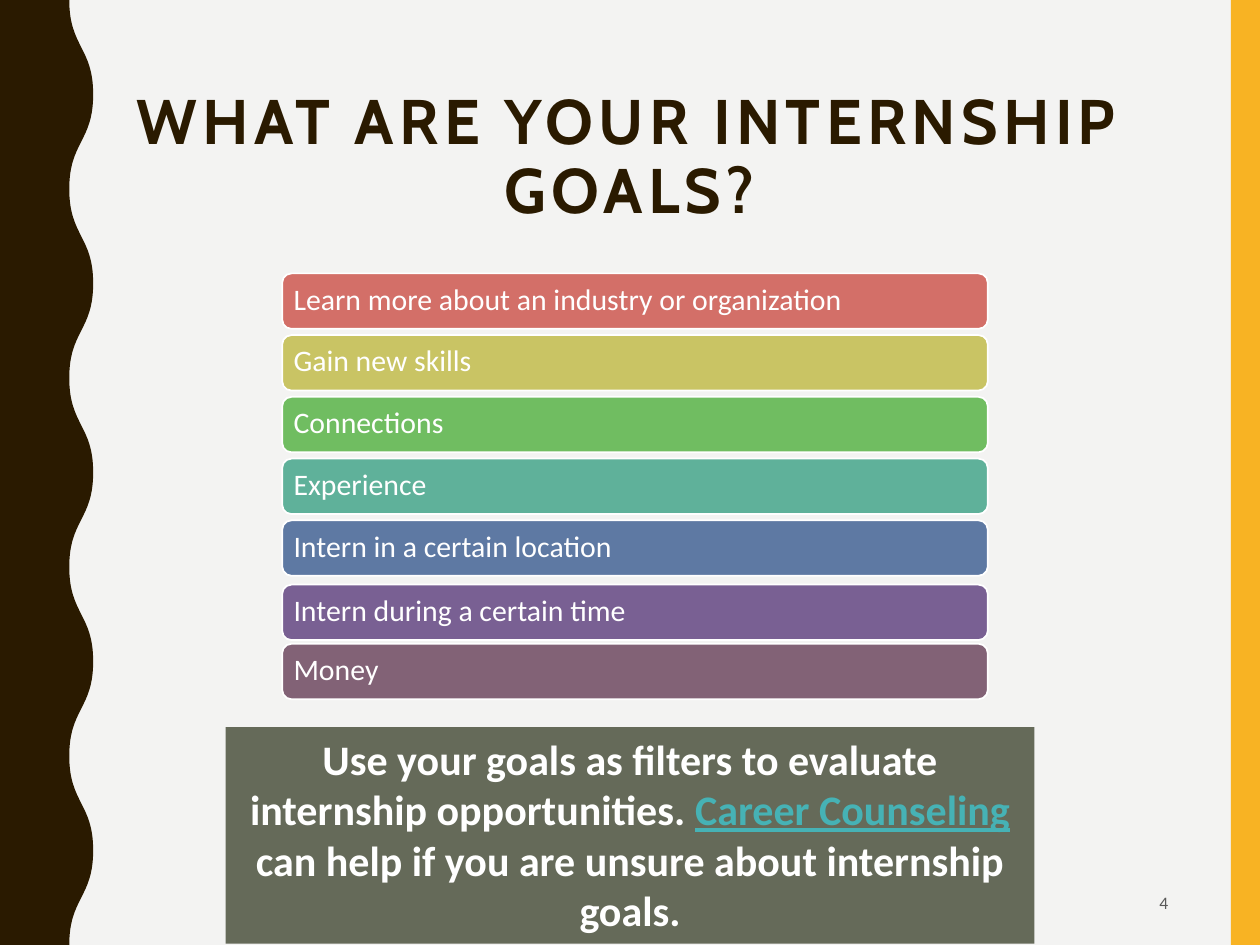
import lxml.etree
import pptx
import pptx.util
import pptx.dml.color
import pptx.enum.shapes
import pptx.enum.text
import pptx.oxml.ns

Inches = pptx.util.Inches
Pt = pptx.util.Pt
Shape = pptx.enum.shapes.MSO_SHAPE
Align = pptx.enum.text.PP_ALIGN
Anchor = pptx.enum.text.MSO_ANCHOR
qn = pptx.oxml.ns.qn


def paint(fmt, color):
    fmt.solid()
    fmt.fore_color.rgb = pptx.dml.color.RGBColor.from_string(color)


def write(shape, text, size, color="FFFFFF", font="Calibri", bold=False, line=False,
          align=Align.LEFT, anchor=Anchor.TOP, space=None, track=0):
    """Add a run to the shape's first paragraph."""
    frame = shape.text_frame
    frame.word_wrap = True
    frame.vertical_anchor = anchor
    para = frame.paragraphs[0]
    para.alignment = align
    para.line_spacing = space
    run = para.add_run()
    run.text = text
    run.font.name = font
    run.font.size = Pt(size)
    run.font.bold = bold
    run.font.underline = line
    paint(run.font.fill, color)
    if track:
        run.font._element.set("spc", str(track * 100))


deck = pptx.Presentation()
deck.slide_width = Inches(10)
deck.slide_height = Inches(7.5)
slide = deck.slides.add_slide(deck.slide_layouts[6])
paint(slide.background.fill, "F3F3F2")
shapes = slide.shapes

# Right stripe
stripe = shapes.add_shape(Shape.RECTANGLE, Inches(9.77), 0, Inches(0.23), Inches(7.5))
stripe.shadow.inherit = False
paint(stripe.fill, "F8B323")
stripe.line.fill.background()

# Wavy left edge: ten half waves of two control points and an end each
low, high, half, waves = 0.55, 0.74, 0.75, 10
points = []
for wave in range(waves):
    near, far = (high, low) if wave % 2 else (low, high)
    top = half * wave
    points += [(near, top + half / 2), (far, top + half / 2), (far, top + half)]
points += [(0, 7.5), (0, 0)]
pen = shapes.build_freeform(Inches(low), 0)
pen.add_line_segments([(Inches(x), Inches(y)) for x, y in points], close=True)
edge = pen.convert_to_shape()
edge.shadow.inherit = False
paint(edge.fill, "2A1A00")
edge.line.fill.background()

# Turn each three wave points into one curve
lines = list(edge._element.iter(qn("a:lnTo")))
for start in range(0, 3 * waves, 3):
    first, *rest = lines[start:start + 3]
    curve = lxml.etree.Element(qn("a:cubicBezTo"))
    first.addprevious(curve)
    for part in [first, *rest]:
        curve.append(part[0])
        part.getparent().remove(part)

# Title
title = shapes.add_textbox(Inches(0.62), Inches(0.67), Inches(8.75), Inches(0.6))
write(title, "WHAT ARE YOUR INTERNSHIP GOALS?", 36, color="2A1A00", font="Cabin",
      bold=True, align=Align.CENTER, space=0.9, track=3)

# Slide number
number = shapes.add_textbox(Inches(7.06), Inches(6.97), Inches(2.31), Inches(0.38))
write(number, "4", 10, color="595959", align=Align.RIGHT, anchor=Anchor.MIDDLE)

# Advice box
advice = shapes.add_shape(Shape.RECTANGLE, Inches(1.79), Inches(5.77),
                          Inches(6.42), Inches(1.72))
advice.shadow.inherit = False
paint(advice.fill, "656A59")
advice.line.fill.background()
for text, color, line in [
    ("Use your goals as filters to evaluate internship opportunities. ", "FFFFFF", False),
    ("Career Counseling", "46B2B5", True),
    (" can help if you are unsure about internship goals.", "FFFFFF", False),
]:
    write(advice, text, 24, color=color, bold=True, line=line, align=Align.CENTER)

# Goal bars at an even pitch, each with its label; the third value nudges a bar down
goals = [
    ("Learn more about an industry or organization", "D36F68", 0),
    ("Gain new skills", "C9C464", 0),
    ("Connections", "70BD61", 0),
    ("Experience", "5FB19A", 0),
    ("Intern in a certain location", "5E79A3", 0),
    ("Intern during a certain time", "796093", 0.02),
    ("Money", "826276", 0),
]
group = shapes.add_group_shape().shapes
for row, (text, color, nudge) in enumerate(goals):
    top = 2.17 + 0.49 * row + nudge
    bar = group.add_shape(Shape.ROUNDED_RECTANGLE, Inches(2.24), Inches(top),
                          Inches(5.6), Inches(0.44))
    bar.shadow.inherit = False
    paint(bar.fill, color)
    paint(bar.line.fill, "FFFFFF")
    bar.line.width = Pt(1)
    label = group.add_textbox(Inches(2.26), Inches(top + 0.02), Inches(5.56), Inches(0.39))
    frame = label.text_frame
    frame.margin_left = frame.margin_right = Inches(0.07)
    frame.margin_top = frame.margin_bottom = Inches(0.07)
    write(label, text, 17, anchor=Anchor.MIDDLE, space=0.9)

deck.save("out.pptx")
